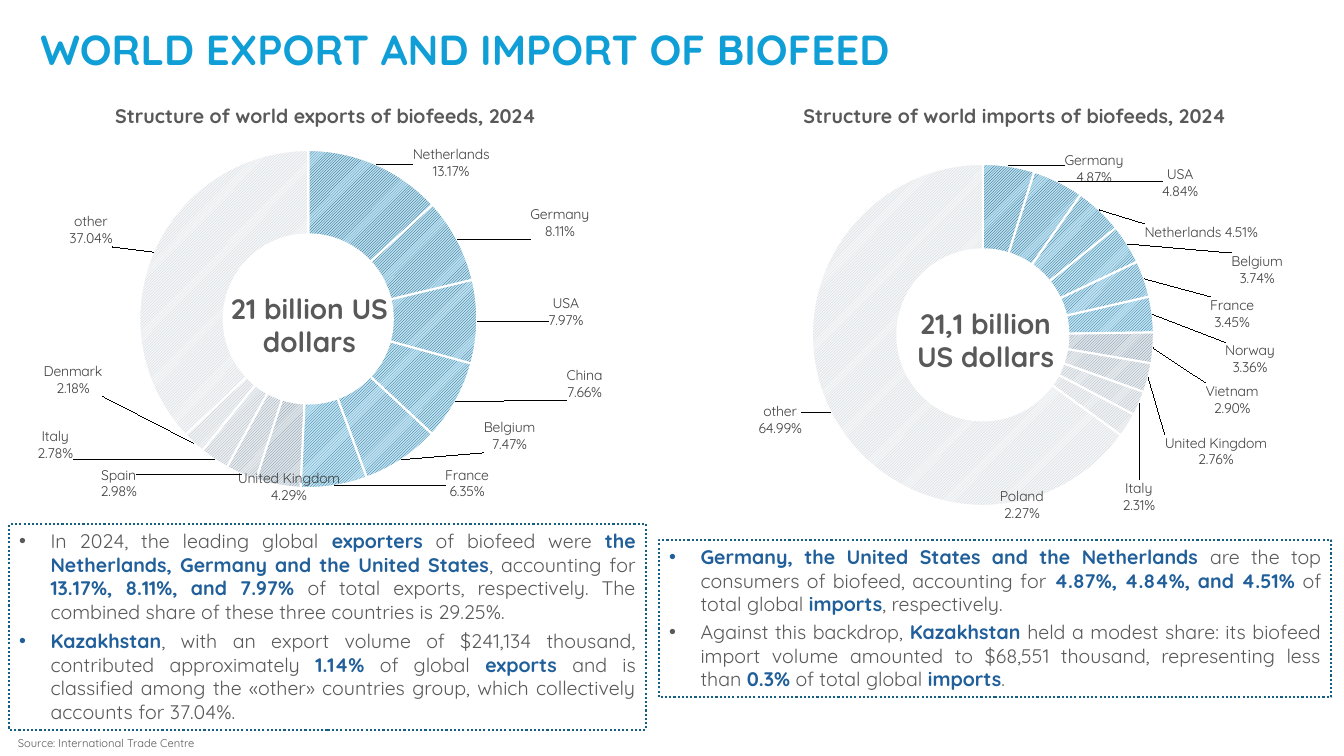
import math
from dataclasses import dataclass

from lxml import etree
from pptx import Presentation
from pptx import util as u
from pptx.chart import data as chart_data
from pptx.dml import color
from pptx.enum import chart as charts, dml, text
from pptx.oxml import ns, parse_xml


@dataclass(frozen=True)
class Theme:
    font: str = "Quicksand"
    title: str = "0F9ED5"
    body: str = "595959"
    accent: str = "215F9A"
    label: str = "404040"
    border: str = "156082"
    white: str = "FFFFFF"
    title_size: int = 30
    total_size: int = 20
    body_size: int = 14
    label_size: int = 10
    source_size: int = 8
    stripes: tuple = (
        ("0E4158", "B9E1F4"), ("104963", "BBE2F4"), ("11506C", "BDE3F4"),
        ("135573", "BEE4F5"), ("145B7B", "C0E4F5"), ("156082", "C1E5F5"),
        ("638097", "E0E6EA"), ("879AAA", "E7EBEE"), ("A2AFBB", "ECEFF1"),
        ("B6BFC8", "F0F2F4"), ("C9D0D6", "F4F6F7"))


THEME = Theme()
CHART_WIDTH, CHART_HEIGHT = 15.62, 9.4
RING_MIDDLE = 0.75  # label anchor as a share of the outer radius

# Panels: boxes are left, top, width, height in cm, measured from the chart's corner;
# shares are country, value, label centre x and y, and label separator
EXPORTS = dict(
    origin=(0, 3.4), ring=(7.77, 4.64, 4.26),
    heading="Structure of world exports of biofeeds, 2024",
    heading_box=(0.38, -0.91, 15.67, 0.86),
    total="21 billion US dollars", total_box=(5.54, 3.81, 4.52, 1.96),
    list_box=(0.23, 9.81, 16.05, 5.18), gap=4,
    shares=[
        ("Netherlands", 0.1317, 11.37, 0.71, "\n"), ("Germany", 0.0811, 14.11, 2.22, "\n"),
        ("USA", 0.0797, 14.26, 4.46, "\n"), ("China", 0.0766, 14.73, 6.28, "\n"),
        ("Belgium", 0.0747, 12.84, 7.59, "\n"), ("France", 0.0635, 11.77, 8.78, "\n"),
        ("United Kingdom", 0.0429, 7.28, 8.87, "\n"), ("Spain", 0.0298, 2.99, 8.78, "\n"),
        ("Italy", 0.0278, 1.39, 7.81, "\n"), ("Denmark", 0.0218, 1.84, 6.16, "\n"),
        ("other", 0.3704, 2.29, 2.4, "\n")],
    points=[
        "In 2024, the leading global *exporters* of biofeed were *the Netherlands, Germany "
        "and the United States*, accounting for *13.17%, 8.11%, and 7.97% *of total exports, "
        "respectively. The combined share of these three countries is 29.25%.",
        "*Kazakhstan*, with an export volume of $241,134 thousand, contributed approximately "
        "*1.14% *of global *exports* and is classified among the «other» countries group, "
        "which collectively accounts for 37.04%."])

IMPORTS = dict(
    origin=(17.04, 3.76), ring=(7.73, 4.68, 4.31),
    heading="Structure of world imports of biofeeds, 2024",
    heading_box=(0.64, -1.27, 15.8, 0.86),
    total="21,1 billion\nUS dollars", total_box=(5.11, 3.83, 5.38, 1.96),
    list_box=(-0.43, 9.85, 16.94, 3.96), gap=3,
    shares=[
        ("Germany", 0.0487, 10.53, 0.49, "\n"), ("USA", 0.0484, 12.7, 0.85, "\n"),
        ("Netherlands", 0.0451, 13.23, 2.09, " "), ("Belgium", 0.0374, 14.64, 3.04, "\n"),
        ("France", 0.0345, 14.01, 4.14, "\n"), ("Norway", 0.0336, 14.46, 5.29, "\n"),
        ("Vietnam", 0.029, 14.01, 6.31, "\n"), ("United Kingdom", 0.0276, 13.6, 7.61, "\n"),
        ("Italy", 0.0231, 11.66, 8.76, "\n"), ("Poland", 0.0227, 8.71, 8.97, "\n"),
        ("other", 0.6499, 2.62, 6.82, "\n")],
    points=[
        "*Germany, the United States and the Netherlands *are the top consumers of biofeed, "
        "accounting for *4.87%, 4.84%, and 4.51% *of total global *imports*, respectively.",
        "Against this backdrop, *Kazakhstan* held a modest share: its biofeed import volume "
        "amounted to $68,551 thousand, representing less than *0.3%* of total global *imports*."])


def apply(target, formats):
    for name, value in formats.items():
        setattr(target, name, value)


def style_font(font, size, rgb, bold=False):
    apply(font, dict(name=THEME.font, size=u.Pt(size), bold=bold))
    font.color.rgb = color.RGBColor.from_string(rgb)


def place(shape, box):
    apply(shape, dict(zip(("left", "top", "width", "height"), map(u.Cm, box))))


def shift(box, origin):
    return (box[0] + origin[0], box[1] + origin[1], *box[2:])


def add_label(slide, box, words, size, bold=True, alignment=text.PP_ALIGN.CENTER):
    frame = slide.shapes.add_textbox(*map(u.Cm, box)).text_frame
    apply(frame, dict(word_wrap=True, text=words))
    for paragraph in frame.paragraphs:
        paragraph.alignment = alignment
        style_font(paragraph.font, size, THEME.body, bold)


def manual_layout(target, **values):
    """Build a chart layout element from fractions of the chart area."""
    layout = etree.Element(ns.qn("c:layout"))
    manual = etree.SubElement(layout, ns.qn("c:manualLayout"))
    if target:
        etree.SubElement(manual, ns.qn("c:layoutTarget")).set("val", target)
        for mode in ("xMode", "yMode"):
            etree.SubElement(manual, ns.qn(f"c:{mode}")).set("val", "edge")
    for name, value in values.items():
        etree.SubElement(manual, ns.qn(f"c:{name}")).set("val", f"{value:.5f}")
    return layout


def add_title(slide, box):
    title = slide.shapes.title
    place(title, box)
    frame = title.text_frame
    apply(frame, dict(text="WORLD EXPORT AND IMPORT OF BIOFEED", word_wrap=True,
                      vertical_anchor=text.MSO_ANCHOR.MIDDLE, margin_left=0,
                      margin_right=0, margin_top=0, margin_bottom=0))
    frame.paragraphs[0].alignment = text.PP_ALIGN.LEFT
    style_font(frame.paragraphs[0].font, THEME.title_size, THEME.title, True)


def add_doughnut(slide, box, ring, shares):
    center_x, center_y, radius = ring
    data = chart_data.CategoryChartData(number_format="0.00%")
    data.categories = [share[0] for share in shares]
    data.add_series("Series 1", [share[1] for share in shares])
    chart = slide.shapes.add_chart(charts.XL_CHART_TYPE.DOUGHNUT, *map(u.Cm, box), data).chart
    apply(chart, dict(has_title=False, has_legend=False))
    style_font(chart.font, THEME.label_size, THEME.label)
    plot = chart.plots[0]
    plot.vary_by_categories = True
    series = plot.series[0]
    apply(series.data_labels, dict(show_category_name=True, show_value=True,
                                   number_format="0.00%", number_format_is_linked=False))
    style_font(series.data_labels.font, THEME.label_size, THEME.label)

    # Slices and their labels, each moved from the middle of its slice
    offsets, turned = [], 0
    for index, (country, value, x, y, separator) in enumerate(shares):
        point = series.points[index]
        fill = point.format.fill
        fill.patterned()
        fill.pattern = dml.MSO_PATTERN.LIGHT_UPWARD_DIAGONAL
        fill.fore_color.rgb, fill.back_color.rgb = map(
            color.RGBColor.from_string, THEME.stripes[index])
        point.format.line.color.rgb = color.RGBColor.from_string(THEME.white)
        point.format.line.width = u.Pt(1.5)
        frame = point.data_label.text_frame
        apply(frame, dict(text=f"{country}{separator}{value:.2%}", word_wrap=False))
        for paragraph in frame.paragraphs:
            for run in paragraph.runs:
                style_font(run.font, THEME.label_size, THEME.label)
        angle = math.tau * (turned + value / 2)
        turned += value
        offsets.append((x - center_x - RING_MIDDLE * radius * math.sin(angle),
                        y - center_y + RING_MIDDLE * radius * math.cos(angle)))

    # Label places, leader lines, ring place and hole
    space = chart._chartSpace
    for label, (x, y) in zip(space.iter(ns.qn("c:dLbl")), offsets):
        label.insert(1, manual_layout(None, x=x / CHART_WIDTH, y=y / CHART_HEIGHT))
    next(space.iter(ns.qn("c:dLbls"))).append(parse_xml(
        f'<c:extLst {ns.nsdecls("c")}><c:ext uri="{{CE6537A1-D6FC-4f65-9D91-7224C49458BB}}" '
        'xmlns:c15="http://schemas.microsoft.com/office/drawing/2012/chart">'
        '<c15:showLeaderLines val="1"/></c:ext></c:extLst>'))
    area = next(space.iter(ns.qn("c:plotArea")))
    for layout in area.findall(ns.qn("c:layout")):
        area.remove(layout)
    area.insert(0, manual_layout(
        "inner", x=(center_x - radius) / CHART_WIDTH, y=(center_y - radius) / CHART_HEIGHT,
        w=2 * radius / CHART_WIDTH, h=2 * radius / CHART_HEIGHT))
    next(space.iter(ns.qn("c:holeSize"))).set("val", "70")


def add_findings(shape, box, points, gap):
    place(shape, box)
    shape.line.color.rgb = color.RGBColor.from_string(THEME.border)
    apply(shape.line, dict(width=u.Pt(1.5), dash_style=dml.MSO_LINE.ROUND_DOT))
    frame = shape.text_frame
    apply(frame, dict(word_wrap=True, auto_size=text.MSO_AUTO_SIZE.NONE,
                      vertical_anchor=text.MSO_ANCHOR.TOP))
    for index, point in enumerate(points):
        paragraph = frame.add_paragraph() if index else frame.paragraphs[0]
        properties = paragraph._p.get_or_add_pPr()
        properties.set("marL", str(u.Cm(0.79)))
        properties.set("indent", str(-u.Cm(0.79)))
        etree.SubElement(properties, ns.qn("a:buFont")).set("typeface", "Arial")
        etree.SubElement(properties, ns.qn("a:buChar")).set("char", "•")
        apply(paragraph, dict(alignment=text.PP_ALIGN.JUSTIFY, space_before=u.Pt(0),
                              space_after=u.Pt(gap)))
        for part, words in enumerate(point.split("*")):
            if words:
                run = paragraph.add_run()
                run.text = words
                strong = part % 2 == 1
                style_font(run.font, THEME.body_size,
                           THEME.accent if strong else THEME.body, strong)


def add_panel(slide, placeholder, panel):
    origin = panel["origin"]
    add_doughnut(slide, (*origin, CHART_WIDTH, CHART_HEIGHT), panel["ring"], panel["shares"])
    add_label(slide, shift(panel["heading_box"], origin), panel["heading"], THEME.body_size)
    add_label(slide, shift(panel["total_box"], origin), panel["total"], THEME.total_size)
    add_findings(placeholder, shift(panel["list_box"], origin), panel["points"], panel["gap"])


def main():
    presentation = Presentation()
    apply(presentation, dict(slide_width=u.Cm(33.87), slide_height=u.Cm(19.05)))
    slide = presentation.slides.add_slide(presentation.slide_layouts[3])
    add_title(slide, (1.02, 0.58, 32.26, 1.32))
    for index, panel in enumerate((EXPORTS, IMPORTS), 1):
        add_panel(slide, slide.placeholders[index], panel)
    add_label(slide, (0.2, 18.44, 21.11, 0.61), "Source: International Trade Centre",
              THEME.source_size, False, text.PP_ALIGN.LEFT)
    presentation.save("out.pptx")


if __name__ == "__main__":
    main()
